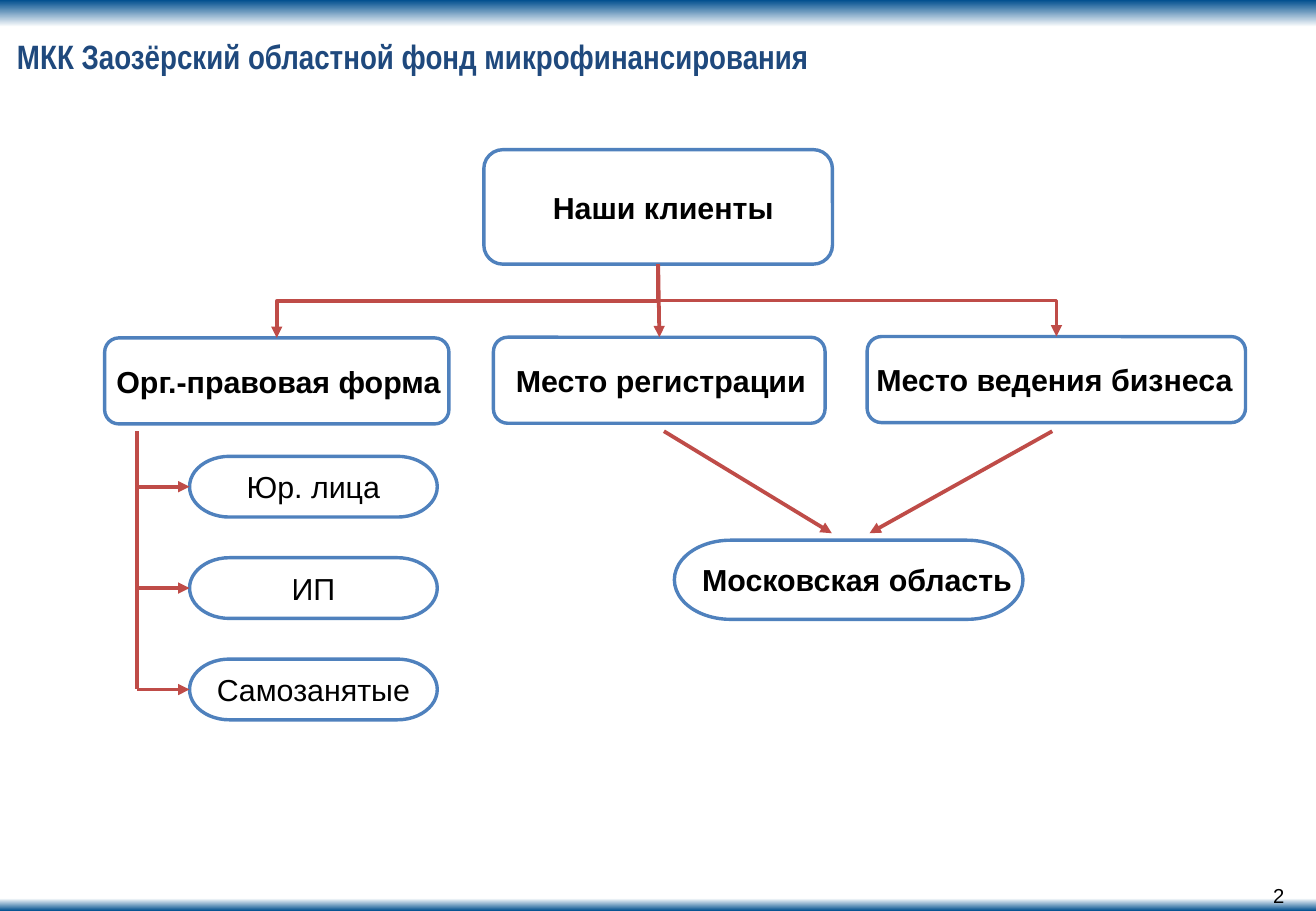
"""Build a slide with a chart of client criteria for a microfinance fund."""
from dataclasses import dataclass

from lxml import etree
from pptx import Presentation
from pptx.dml.color import RGBColor
from pptx.enum.shapes import MSO_CONNECTOR, MSO_SHAPE
from pptx.enum.text import MSO_ANCHOR, PP_ALIGN
from pptx.oxml.ns import qn
from pptx.shapes.connector import Connector
from pptx.slide import Slide
from pptx.text.text import TextFrame
from pptx.util import Pt

RECTANGLE = MSO_SHAPE.RECTANGLE
ROUNDED = MSO_SHAPE.ROUNDED_RECTANGLE
TERMINATOR = MSO_SHAPE.FLOWCHART_TERMINATOR
STRAIGHT = MSO_CONNECTOR.STRAIGHT
ELBOW = MSO_CONNECTOR.ELBOW
MIDDLE = MSO_ANCHOR.MIDDLE
LEFT = PP_ALIGN.LEFT
CENTER = PP_ALIGN.CENTER
RIGHT = PP_ALIGN.RIGHT

NAVY = RGBColor(0x00, 0x4E, 0x8E)
TITLE_BLUE = RGBColor(0x1F, 0x49, 0x7D)
OUTLINE_BLUE = RGBColor(0x4F, 0x81, 0xBD)
ARROW_RED = RGBColor(0xBF, 0x4C, 0x48)
WHITE = RGBColor(0xFF, 0xFF, 0xFF)
BLACK = RGBColor(0x00, 0x00, 0x00)

SLIDE_WIDTH = 779.76
SLIDE_HEIGHT = 540
TRUNK_X = 81.4
FORM_LEFT = 112.3
FORM_TOP = 270.5
FORM_STEP = 60.1
FORM_HEIGHT = 36


@dataclass(frozen=True)
class Box:
    text: str
    left: float
    top: float
    width: float
    height: float
    kind: MSO_SHAPE = ROUNDED
    bold: bool = True
    shift: float = 0


@dataclass(frozen=True)
class Line:
    begin_x: float
    begin_y: float
    end_x: float
    end_y: float
    arrow: bool = True


FORMS = ("Юр. лица", "ИП", "Самозанятые")
FORM_TOPS = [FORM_TOP + index * FORM_STEP for index in range(len(FORMS))]
FORM_MIDDLES = [top + FORM_HEIGHT / 2 for top in FORM_TOPS]

BOXES = [
    Box("Наши клиенты", 286.7, 88.7, 206.6, 67.9, shift=3),
    Box("Орг.-правовая форма", 62, 200.3, 204, 51, shift=1),
    Box("Место регистрации", 292.4, 199.9, 196.5, 51, shift=1),
    Box("Место ведения бизнеса", 513.8, 199.5, 224.2, 51, shift=-1),
    Box("Московская область", 399.6, 320.2, 206.6, 46.9, TERMINATOR, shift=5),
] + [
    Box(text, FORM_LEFT, top, 146.8, FORM_HEIGHT, TERMINATOR, bold=False)
    for text, top in zip(FORMS, FORM_TOPS)
]

ELBOWS = [
    Line(390, 156.7, 626, 199.5),
    Line(390, 156.7, 164, 200.3),
]

STRAIGHTS = [
    Line(390, 156.7, 390.7, 199.9),
    Line(393.4, 255.6, 492.9, 316.1),
    Line(623.5, 255.6, 515.2, 316.1),
    Line(TRUNK_X, 255.6, TRUNK_X, FORM_MIDDLES[-1], arrow=False),
] + [Line(TRUNK_X, middle, FORM_LEFT, middle) for middle in FORM_MIDDLES]


def write_text(frame: TextFrame, text: str, size: float, color: RGBColor,
               alignment: PP_ALIGN, bold: bool = False, name: str = "Arial") -> None:
    """Fill a frame with one unwrapped, vertically centred paragraph."""
    frame.margin_left = frame.margin_right = 0
    frame.margin_top = frame.margin_bottom = 0
    frame.word_wrap = False
    frame.vertical_anchor = MIDDLE
    paragraph = frame.paragraphs[0]
    paragraph.text = text
    paragraph.alignment = alignment
    paragraph.font.name = name
    paragraph.font.size = Pt(size)
    paragraph.font.bold = bold
    paragraph.font.color.rgb = color


def add_band(slide: Slide, top: float, height: float,
             colors: tuple[RGBColor, RGBColor]) -> None:
    """Draw a full-width band shaded from top to bottom."""
    shape = slide.shapes.add_shape(
        RECTANGLE, 0, Pt(top), Pt(SLIDE_WIDTH), Pt(height))
    shape.shadow.inherit = False
    shape.line.fill.background()
    shape.fill.gradient()
    shape.fill.gradient_angle = 270
    for stop, color in zip(shape.fill.gradient_stops, colors):
        stop.color.rgb = color


def add_box(slide: Slide, box: Box) -> None:
    """Draw an outlined box with its label."""
    shape = slide.shapes.add_shape(
        box.kind, Pt(box.left), Pt(box.top), Pt(box.width), Pt(box.height))
    shape.shadow.inherit = False
    shape.fill.solid()
    shape.fill.fore_color.rgb = WHITE
    shape.line.color.rgb = OUTLINE_BLUE
    shape.line.width = Pt(2)
    frame = shape.text_frame
    write_text(frame, box.text, 18, BLACK, CENTER, box.bold)
    frame.margin_left = Pt(max(0, 2 * box.shift))
    frame.margin_right = Pt(max(0, -2 * box.shift))


def add_line(slide: Slide, line: Line, kind: MSO_CONNECTOR = STRAIGHT) -> Connector:
    """Draw a red connector, with an arrowhead if asked for."""
    connector = slide.shapes.add_connector(
        kind, Pt(line.begin_x), Pt(line.begin_y), Pt(line.end_x), Pt(line.end_y))
    connector.line.color.rgb = ARROW_RED
    connector.line.width = Pt(2.25)
    if line.arrow:
        outline = connector.line._get_or_add_ln()
        etree.SubElement(outline, qn("a:tailEnd"), type="triangle")
    etree.SubElement(connector._element.spPr, qn("a:effectLst"))
    return connector


def add_elbow(slide: Slide, line: Line) -> None:
    """Draw an elbow that leaves and arrives vertically, by a quarter turn."""
    center_x = (line.begin_x + line.end_x) / 2
    center_y = (line.begin_y + line.end_y) / 2
    rightward = line.end_x > line.begin_x
    half_width = (line.end_y - line.begin_y) / 2 * (-1 if rightward else 1)
    half_height = abs(line.end_x - line.begin_x) / 2
    turned = Line(center_x - half_width, center_y - half_height,
                  center_x + half_width, center_y + half_height)
    connector = add_line(slide, turned, ELBOW)
    degrees = 270 if rightward else 90
    connector._element.spPr.find(qn("a:xfrm")).set("rot", str(degrees * 60000))


def main() -> None:
    """Build and save the presentation."""
    presentation = Presentation()
    presentation.slide_width = Pt(SLIDE_WIDTH)
    presentation.slide_height = Pt(SLIDE_HEIGHT)
    slide = presentation.slides.add_slide(presentation.slide_layouts[6])

    add_band(slide, 532.5, 7.5, (WHITE, NAVY))
    add_band(slide, 0, 16, (NAVY, WHITE))
    title = slide.shapes.add_textbox(Pt(10.1), Pt(21), Pt(728), Pt(24.5))
    write_text(title.text_frame, "МКК Заозёрский областной фонд микрофинансирования",
               20, TITLE_BLUE, LEFT, True, "Arial Narrow")
    number = slide.shapes.add_textbox(Pt(598.3), Pt(523.4), Pt(162.7), Pt(14.4))
    write_text(number.text_frame, "2", 12, BLACK, RIGHT)

    for box in BOXES:
        add_box(slide, box)
    for line in ELBOWS:
        add_elbow(slide, line)
    for line in STRAIGHTS:
        add_line(slide, line)
    presentation.save("out.pptx")


if __name__ == "__main__":
    main()
